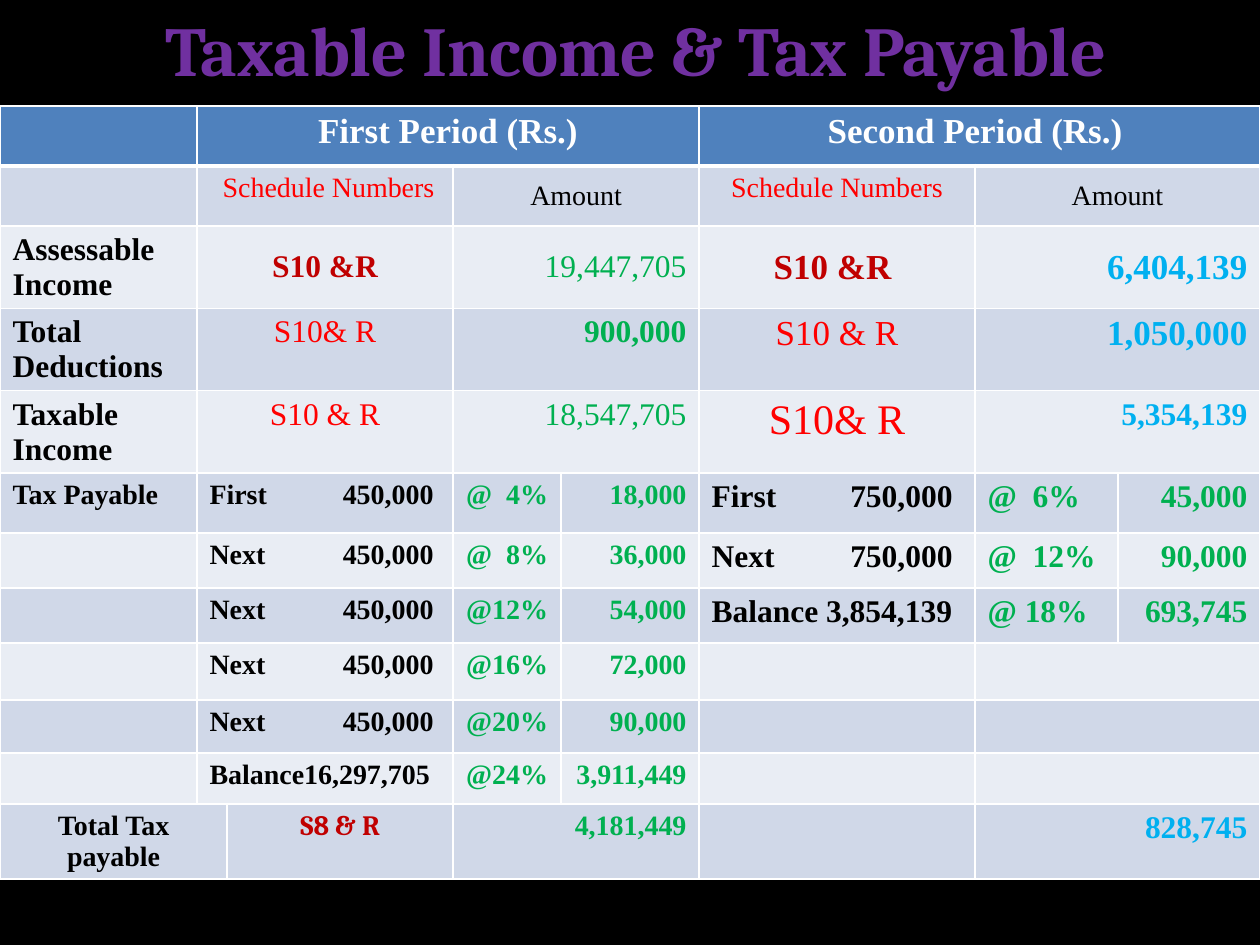
import pptx
import pptx.util
import pptx.dml.color
import pptx.enum.text
import pptx.oxml
import pptx.oxml.ns

PX = 914400 // 126
COLORS = {
    "black": "000000", "white": "FFFFFF", "purple": "7030A0", "header": "4F81BD",
    "band_dark": "D0D8E8", "band_light": "E9EDF4", "red": "FF0000",
    "dark_red": "C00000", "green": "00B050", "blue": "00B0F0",
}
ALIGN = pptx.enum.text.PP_ALIGN
ANCHOR = pptx.enum.text.MSO_ANCHOR
ALIGNMENTS = {"left": ALIGN.LEFT, "center": ALIGN.CENTER, "right": ALIGN.RIGHT}
NAMESPACE = pptx.oxml.ns.nsdecls("a")


def write_text(frame, text, align, size, color, bold=True, font="Times New Roman"):
    paragraph = frame.paragraphs[0]
    paragraph.alignment = ALIGNMENTS[align]
    run = paragraph.add_run()
    run.text = text
    run.font.color.rgb = pptx.dml.color.RGBColor.from_string(COLORS[color])
    for name, value in {"name": font, "size": pptx.util.Pt(size), "bold": bold}.items():
        setattr(run.font, name, value)
    return paragraph


def add_border(cell, side, points):
    line = pptx.oxml.parse_xml(
        f'<a:{side} {NAMESPACE} w="{points * 12700}"><a:solidFill>'
        f'<a:srgbClr val="{COLORS["white"]}"/></a:solidFill></a:{side}>')
    properties = cell._tc.get_or_add_tcPr()
    # Border lines come before the cell fill
    properties.insert(len(properties.findall("*")) - 1, line)


presentation = pptx.Presentation()
presentation.slide_width = 1260 * PX
presentation.slide_height = 945 * PX
slide = presentation.slides.add_slide(presentation.slide_layouts[6])
slide.background.fill.solid()
slide.background.fill.fore_color.rgb = pptx.dml.color.RGBColor.from_string(COLORS["black"])

# Table contents: (first column, last column, text, align, size, color, bold, font)
rows = [
    [(0, 0), (1, 4, "First Period (Rs.)", "center", 20, "white"),
     (5, 7, "Second Period (Rs.) ", "center", 20, "white")],
    [(0, 0), (1, 2, " Schedule Numbers", "center", 16, "red", False),
     (3, 4, "Amount", "center", 16, "black", False),
     (5, 5, "Schedule Numbers", "center", 16, "red", False),
     (6, 7, "Amount", "center", 16, "black", False)],
    [(0, 0, "Assessable Income", "left", 18, "black"),
     (1, 2, "S10 &R", "center", 18, "dark_red"),
     (3, 4, "19,447,705", "right", 18, "green", False),
     (5, 5, "S10 &R ", "center", 20, "dark_red"),
     (6, 7, "6,404,139", "right", 20, "blue")],
    [(0, 0, "Total Deductions", "left", 18, "black"),
     (1, 2, "S10& R", "center", 18, "red", False),
     (3, 4, "900,000", "right", 18, "green"),
     (5, 5, "S10 & R", "center", 20, "red", False),
     (6, 7, "1,050,000", "right", 20, "blue")],
    [(0, 0, "Taxable Income", "left", 18, "black"),
     (1, 2, "S10 & R", "center", 18, "red", False),
     (3, 4, "18,547,705", "right", 18, "green", False),
     (5, 5, "S10& R", "center", 24, "red", False),
     (6, 7, "5,354,139", "right", 18, "blue")],
]

# Tax slabs of both periods: slab, rate, tax
first_slabs = [
    ("First\t450,000", "@  4%", "18,000"), ("Next\t450,000", "@  8%", "36,000"),
    ("Next\t450,000", "@12%", "54,000"), ("Next\t450,000", "@16%", "72,000"),
    ("Next\t450,000", "@20%", "90,000"), ("Balance16,297,705", "@24%", "3,911,449"),
]
second_slabs = [
    ("First\t750,000", "@  6%", "45,000"), ("Next\t750,000", "@  12%", "90,000"),
    ("Balance 3,854,139", "@ 18%", "693,745"),
]
for index, (slab, rate, tax) in enumerate(first_slabs):
    label = (0, 0, "Tax Payable", "left", 16, "black") if index == 0 else (0, 0)
    row = [label, (1, 2, slab, "left", 16, "black"),
           (3, 3, rate, "center", 16, "green"), (4, 4, tax, "right", 16, "green")]
    if index < len(second_slabs):
        slab, rate, tax = second_slabs[index]
        row += [(5, 5, slab, "left", 18, "black"),
                (6, 6, rate, "left", 18, "green"), (7, 7, tax, "right", 18, "green")]
    else:
        row += [(5, 5), (6, 7)]
    rows.append(row)

rows.append([
    (0, 1, "Total Tax payable", "center", 16, "black"),
    (2, 2, "S8 & R", "center", 16, "dark_red", True, "Cambria"),
    (3, 4, "4,181,449", "right", 16, "green"), (5, 5),
    (6, 7, "828,745", "right", 18, "blue")])

# Table grid
column_widths = [197, 30, 226, 108, 138, 276, 143, 142]
row_heights = [60, 60, 60, 60, 70, 60, 55, 55, 57, 53, 51, 39]
table_shape = slide.shapes.add_table(
    len(row_heights), len(column_widths), 0, 106 * PX, 1260 * PX, 796 * PX)
table = table_shape.table
for column, width in zip(table.columns, column_widths):
    column.width = width * PX
for table_row, height in zip(table.rows, row_heights):
    table_row.height = height * PX
table_shape.height = 796 * PX

# Fills and borders
for row_index in range(len(row_heights)):
    band = "header" if row_index == 0 else "band_dark" if row_index % 2 else "band_light"
    for column_index in range(len(column_widths)):
        cell = table.cell(row_index, column_index)
        cell.fill.solid()
        cell.fill.fore_color.rgb = pptx.dml.color.RGBColor.from_string(COLORS[band])
        for side in ("lnL", "lnR", "lnT", "lnB"):
            under_header = (row_index, side) in ((0, "lnB"), (1, "lnT"))
            add_border(cell, side, 3 if under_header else 1)

# Merged cells and text
for row_index, row in enumerate(rows):
    for first, last, *content in row:
        cell = table.cell(row_index, first)
        if last > first:
            cell.merge(table.cell(row_index, last))
        if not content:
            continue
        paragraph = write_text(cell.text_frame, *content)
        if row_index == 2 or content[0] == "Amount":
            cell.vertical_anchor = ANCHOR.MIDDLE
        if "\t" in content[0]:
            stop = (224 if first == 1 else 241) * PX
            paragraph._p.get_or_add_pPr().append(pptx.oxml.parse_xml(
                f'<a:tabLst {NAMESPACE}><a:tab pos="{stop}" algn="r"/></a:tabLst>'))

# Title
title = slide.shapes.add_textbox(69 * PX, 0, 1134 * PX, 97 * PX)
for name, value in {"word_wrap": True, "vertical_anchor": ANCHOR.MIDDLE}.items():
    setattr(title.text_frame, name, value)
write_text(title.text_frame, "Taxable Income & Tax Payable", "center", 40, "purple",
           font="Cambria")

presentation.save("out.pptx")
